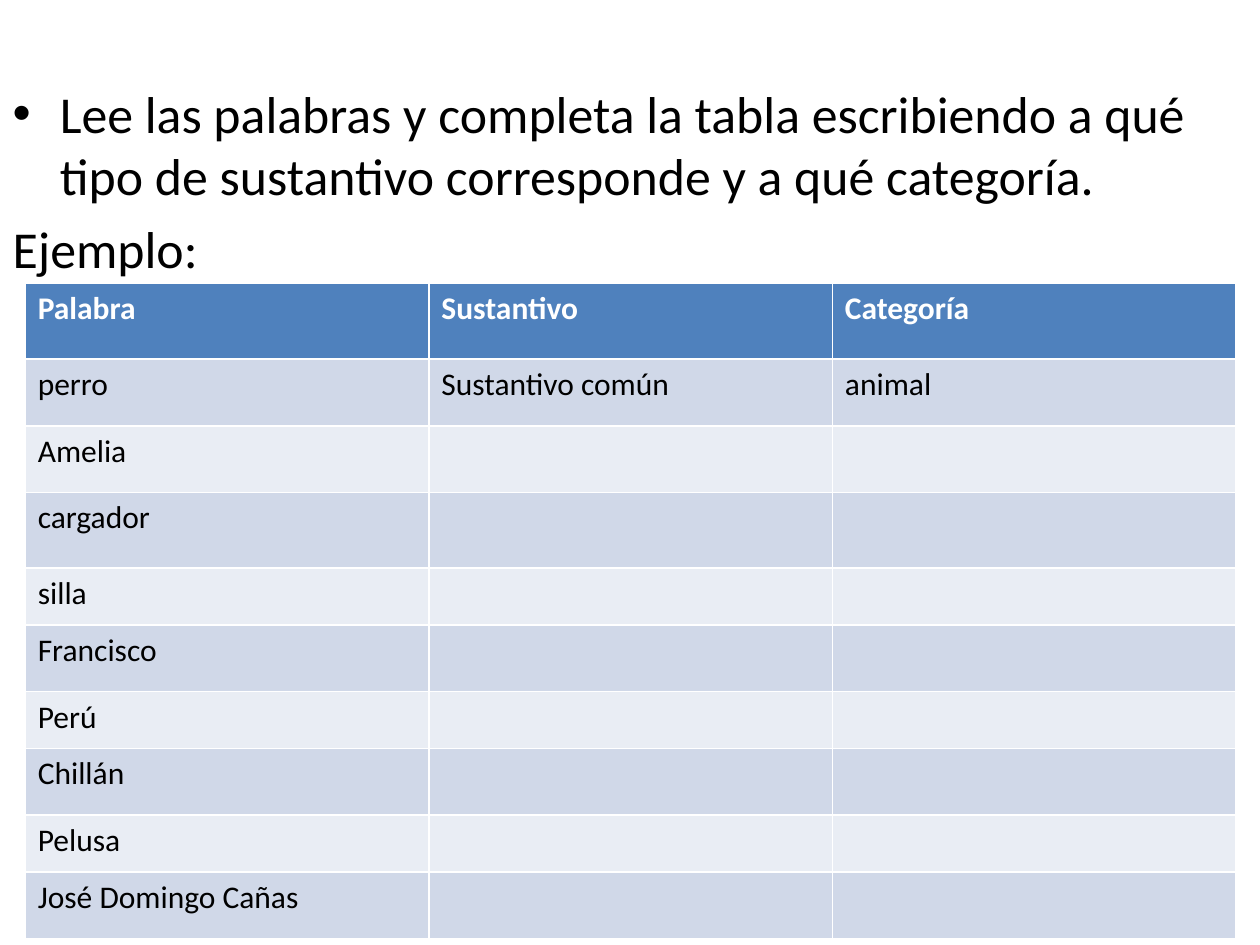
from lxml import etree
from pptx import Presentation
from pptx.dml.color import RGBColor
from pptx.enum.text import MSO_AUTO_SIZE
from pptx.oxml.ns import qn
from pptx.util import Inches, Pt

INSTRUCTION = ("Lee las palabras y completa la tabla escribiendo a qué "
               "tipo de sustantivo corresponde y a qué categoría.")
EXAMPLE = "Ejemplo:"
HEADERS = ("Palabra", "Sustantivo", "Categoría")
WORDS = [
    ("perro", "Sustantivo común", "animal"),
    ("Amelia",),
    ("cargador",),
    ("silla",),
    ("Francisco",),
    ("Perú",),
    ("Chillán",),
    ("Pelusa",),
    ("José Domingo Cañas",),
]
TALL, MEDIUM, SHORT = 0.6, 0.53, 0.45
ROW_HEIGHTS = (TALL, MEDIUM, MEDIUM, TALL, SHORT,
               MEDIUM, SHORT, MEDIUM, SHORT, MEDIUM)

FONT = "Calibri"
BLACK = RGBColor(0x00, 0x00, 0x00)
WHITE = RGBColor(0xFF, 0xFF, 0xFF)
HEADER_FILL = RGBColor(0x4F, 0x81, 0xBD)
BAND_FILLS = (RGBColor(0xE9, 0xED, 0xF4), RGBColor(0xD0, 0xD8, 0xE8))

SLIDE_WIDTH, SLIDE_HEIGHT = 10, 7.5
BODY_TOP, BODY_HEIGHT = 0.6, 1.65
TABLE_LEFT, TABLE_WIDTH = 0.2, 9.61
BODY_LAYOUT = 1
NO_AUTOFIT = MSO_AUTO_SIZE.NONE


def write(para, text, size=18, color=BLACK, bold=False):
    span = para.add_run()
    span.text = text
    span.font.name = FONT
    span.font.size = Pt(size)
    span.font.color.rgb = color
    span.font.bold = bold


def remove_bullet(para):
    properties = para._p.get_or_add_pPr()
    properties.set("marL", "0")
    properties.set("indent", "0")
    etree.SubElement(properties, qn("a:buNone"))


def add_instructions(page):
    box = page.placeholders[1]
    box.left, box.top = 0, Inches(BODY_TOP)
    box.width, box.height = Inches(SLIDE_WIDTH), Inches(BODY_HEIGHT)
    frame = box.text_frame
    frame.auto_size = NO_AUTOFIT
    write(frame.paragraphs[0], INSTRUCTION, size=29.6)
    example = frame.add_paragraph()
    remove_bullet(example)
    write(example, EXAMPLE, size=29.6)


def add_word_table(page):
    rows = [HEADERS] + WORDS
    table = page.shapes.add_table(
        len(rows), len(HEADERS), Inches(TABLE_LEFT), Inches(BODY_TOP + BODY_HEIGHT),
        Inches(TABLE_WIDTH), Inches(sum(ROW_HEIGHTS))).table
    for row_number, texts in enumerate(rows):
        table.rows[row_number].height = Inches(ROW_HEIGHTS[row_number])
        is_header = row_number == 0
        fill = HEADER_FILL if is_header else BAND_FILLS[row_number % 2]
        for cell in table.rows[row_number].cells:
            cell.fill.solid()
            cell.fill.fore_color.rgb = fill
        for column, text in enumerate(texts):
            write(table.cell(row_number, column).text_frame.paragraphs[0], text,
                  color=WHITE if is_header else BLACK, bold=is_header)


def main():
    deck = Presentation()
    deck.slide_width, deck.slide_height = Inches(SLIDE_WIDTH), Inches(SLIDE_HEIGHT)
    page = deck.slides.add_slide(deck.slide_layouts[BODY_LAYOUT])
    title = page.shapes.title._element
    title.getparent().remove(title)
    add_instructions(page)
    add_word_table(page)
    deck.save("out.pptx")


if __name__ == "__main__":
    main()
